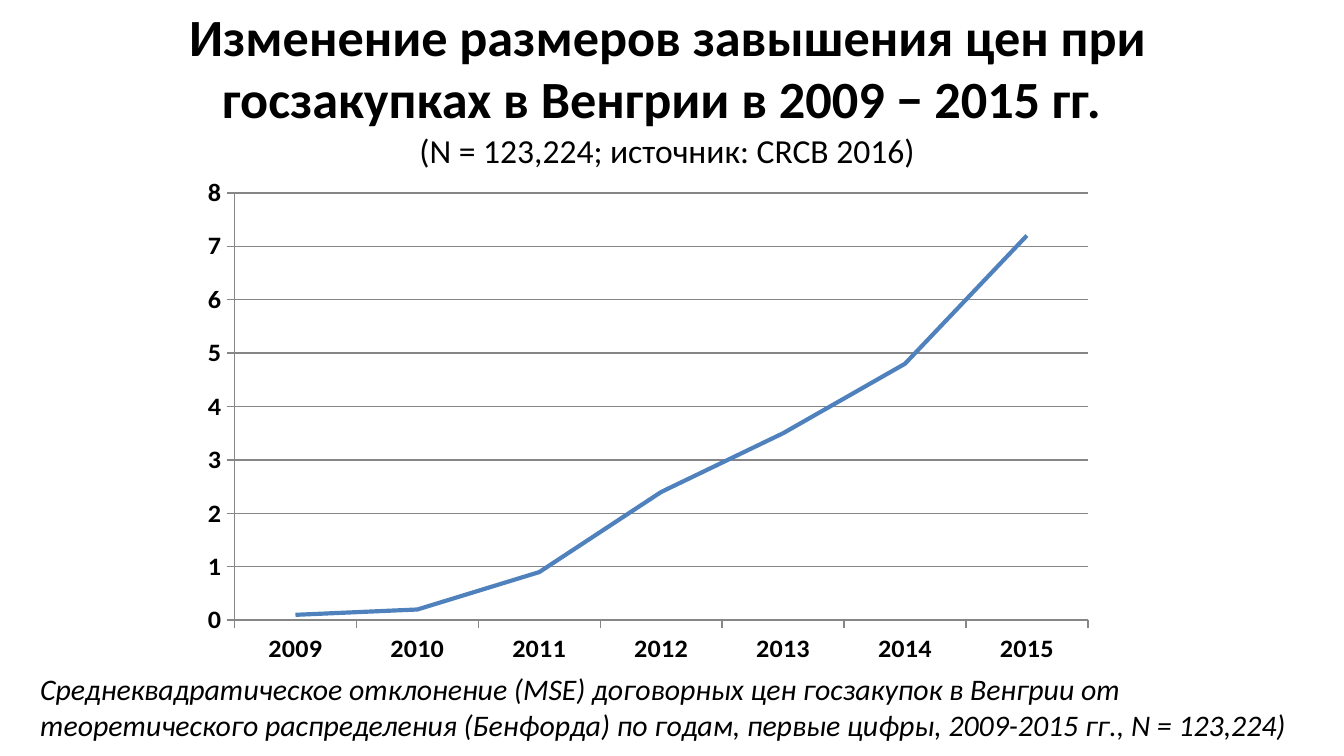
from lxml import etree
from pptx import Presentation
from pptx.chart.data import CategoryChartData
from pptx.dml.color import RGBColor
from pptx.enum import chart as charts, text
from pptx.oxml import ns
from pptx.util import Inches, Pt

FONT = "Calibri"
BLACK = RGBColor(0x00, 0x00, 0x00)
BLUE = RGBColor(0x4F, 0x81, 0xBD)
GRAY = RGBColor(0x86, 0x86, 0x86)

SLIDE_WIDTH = 10
SLIDE_HEIGHT = SLIDE_WIDTH * 9 / 16

TITLE = "Изменение размеров завышения цен при госзакупках в Венгрии в 2009 − 2015 гг. "
SUBTITLE = "(N = 123,224; источник: CRCB 2016)"
CAPTION = ("Среднеквадратическое отклонение (MSE) договорных цен госзакупок в Венгрии от "
           "теоретического распределения (Бенфорда) по годам, первые цифры, "
           "2009-2015 гг., N = 123,224)")
DEVIATION = {"2009": 0.1, "2010": 0.2, "2011": 0.9, "2012": 2.4,
             "2013": 3.5, "2014": 4.8, "2015": 7.2}
PLOT_AREA = {"x": 0.08, "y": 0.02, "w": 0.84, "h": 0.915}


def style_font(font, size, bold=False, italic=False):
    font.name = FONT
    font.size = Pt(size)
    font.bold = bold
    font.italic = italic
    font.color.rgb = BLACK


def add_text(slide, box, lines, alignment):
    """Add a text box; each line is (wording, size, bold, italic)."""
    frame = slide.shapes.add_textbox(*map(Inches, box)).text_frame
    frame.word_wrap = True
    for index, (wording, *style) in enumerate(lines):
        paragraph = frame.add_paragraph() if index else frame.paragraphs[0]
        paragraph.text = wording
        paragraph.alignment = alignment
        style_font(paragraph.font, *style)


def place_plot_area(chart, fractions):
    """Fix the inner plot area as fractions of the chart frame."""
    plot_area = chart.plots[0]._element.getparent()
    for old_layout in plot_area.findall(ns.qn("c:layout")):
        plot_area.remove(old_layout)
    layout = etree.Element(ns.qn("c:layout"))
    plot_area.insert(0, layout)
    manual = etree.SubElement(layout, ns.qn("c:manualLayout"))
    settings = {"layoutTarget": "inner", "xMode": "edge", "yMode": "edge", **fractions}
    for name, value in settings.items():
        etree.SubElement(manual, ns.qn(f"c:{name}")).set("val", str(value))


def add_line_chart(slide, box, values):
    data = CategoryChartData()
    data.categories = list(values)
    data.add_series("Series 1", list(values.values()))
    chart = slide.shapes.add_chart(
        charts.XL_CHART_TYPE.LINE, *map(Inches, box), data).chart
    chart.has_legend = False
    chart.has_title = False
    style_font(chart.font, 10)
    place_plot_area(chart, PLOT_AREA)

    for axis in (chart.category_axis, chart.value_axis):
        axis.major_tick_mark = charts.XL_TICK_MARK.OUTSIDE
        axis.minor_tick_mark = charts.XL_TICK_MARK.NONE
        axis.format.line.color.rgb = GRAY
        style_font(axis.tick_labels.font, 14, bold=True)
    value_axis = chart.value_axis
    value_axis.minimum_scale, value_axis.maximum_scale = 0, 8
    value_axis.major_unit = 1
    value_axis.has_major_gridlines = True
    value_axis.major_gridlines.format.line.color.rgb = GRAY

    plot = chart.plots[0]
    plot.vary_by_categories = False
    series = plot.series[0]
    series.smooth = False
    series.marker.style = charts.XL_MARKER_STYLE.NONE
    series.format.line.color.rgb = BLUE
    series.format.line.width = Pt(2.25)


presentation = Presentation()
presentation.slide_width = Inches(SLIDE_WIDTH)
presentation.slide_height = Inches(SLIDE_HEIGHT)
slide = presentation.slides.add_slide(presentation.slide_layouts[6])

add_line_chart(slide, (1.14, 1.32, 7.56, 3.62), DEVIATION)
add_text(slide, (0.2, 4.94, 9.69, 0.64), [(CAPTION, 16, False, True)],
         text.PP_ALIGN.LEFT)
add_text(slide, (0.91, -0.02, 8.11, 1.35),
         [(TITLE, 28, True, False), (SUBTITLE, 18, False, False)],
         text.PP_ALIGN.CENTER)

presentation.save("out.pptx")
